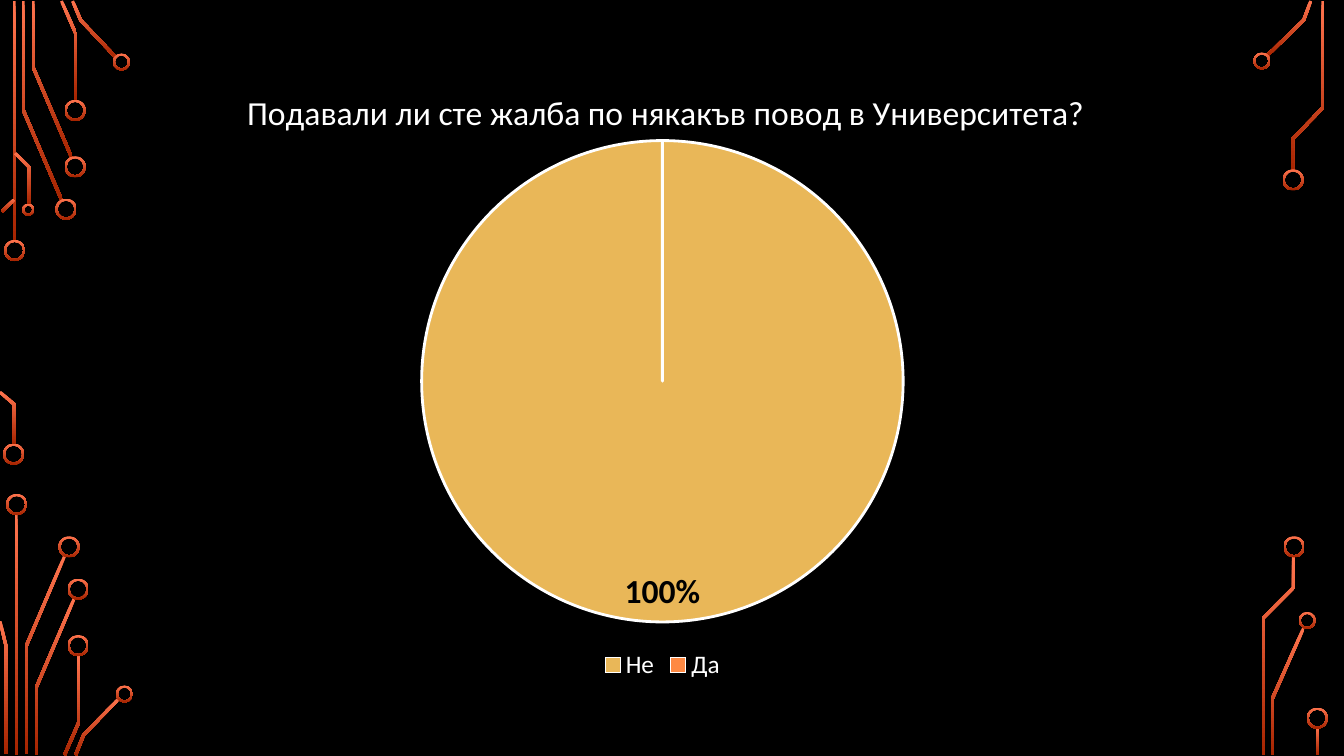
from math import hypot

from lxml.etree import SubElement
from pptx import Presentation
from pptx.chart.data import CategoryChartData
from pptx.dml.color import RGBColor
from pptx.enum.chart import XL_CHART_TYPE, XL_LABEL_POSITION, XL_LEGEND_POSITION
from pptx.enum.shapes import MSO_SHAPE
from pptx.oxml.ns import qn
from pptx.util import Inches, Pt

COLORS = {"back": "000000", "light": "FF744E", "dark": "A62400",
          "white": "FFFFFF", "black": "000000", "no": "E9B758", "yes": "FE8943"}
FONT = "Calibri"
WIDTH = 0.03  # width of a circuit trace
RIM = 0.02    # thickness of a ring

# Centre lines of the circuit traces
TRACES = [
    # top left
    [(0.14, 0.01), (0.14, 2.4)],
    [(0.61, 1.98), (0.23, 1.09), (0.23, 0.01)],
    [(0.71, 1.56), (0.33, 0.67), (0.33, 0.01)],
    [(0.75, 1), (0.75, 0.33), (0.61, 0.01)],
    [(1.15, 0.57), (0.8, 0.2), (0.72, 0.01)],
    [(0.02, 2.1), (0.14, 1.98)],
    [(0.29, 2.03), (0.29, 1.66), (0.15, 1.52)],
    # bottom left
    [(0.14, 4.41), (0.14, 4.01), (0, 3.89)],
    [(0.16, 5.1), (0.16, 7.49)],
    [(0.26, 7.48), (0.26, 6.41), (0.64, 5.52)],
    [(0.06, 7.48), (0.06, 6.41), (0, 6.16)],
    [(0.36, 7.49), (0.36, 6.82), (0.74, 5.93)],
    [(0.64, 7.49), (0.78, 7.17), (0.78, 6.5)],
    [(0.75, 7.49), (0.83, 7.29), (1.18, 6.93)],
    # top right
    [(12.57, 0.55), (12.93, 0.2), (13, 0.01)],
    [(12.82, 1.69), (12.82, 1.38), (13.12, 1.07), (13.12, 0.01)],
    # bottom right
    [(12.62, 7.49), (12.62, 6.93), (12.93, 6.23)],
    [(12.53, 7.49), (12.53, 6.13), (12.83, 5.83), (12.83, 5.52)],
    [(13.07, 7.21), (13.07, 7.49)],
]

# Left and top of the rings, by diameter
RINGS = {
    0.21: [(0.04, 2.38), (0.03, 4.4), (0.55, 1.97), (0.64, 1.55), (0.64, 0.99),
           (0.06, 4.9), (0.58, 5.32), (0.67, 5.74), (0.67, 6.3),
           (12.72, 1.68), (12.73, 5.32), (12.96, 7.02)],
    0.17: [(1.12, 0.53), (1.15, 6.8), (12.43, 0.52), (12.88, 6.07)],
    0.12: [(0.22, 2.02)],
}


def color(name):
    return RGBColor.from_string(COLORS[name])


def style(font, **format):
    font.color.rgb = color(format.pop("color"))
    for key, value in {"name": FONT, **format}.items():
        setattr(font, key, value)


def glow(shape):
    """Fill a shape from light at the top to dark at the bottom."""
    shape.shadow.inherit = False
    shape.line.fill.background()
    shape.fill.gradient()
    shape.fill.gradient_angle = 270
    for stop, name in zip(shape.fill.gradient_stops, ("light", "dark")):
        stop.color.rgb = color(name)


def edge(points):
    """Points half a width to one side of a line, with mitred corners."""
    norms = []
    for (x1, y1), (x2, y2) in zip(points, points[1:]):
        size = hypot(x2 - x1, y2 - y1)
        norms.append(((y1 - y2) / size, (x2 - x1) / size))
    sides = zip(points, norms[:1] + norms, norms + norms[-1:])
    result = []
    for (x, y), (ax, ay), (bx, by) in sides:
        reach = WIDTH / 2 / (1 + ax * bx + ay * by)
        result.append((x + (ax + bx) * reach, y + (ay + by) * reach))
    return result


def add_trace(slide, points):
    band = edge(points) + edge(points[::-1])
    band = [(Inches(x), Inches(y)) for x, y in band]
    form = slide.shapes.build_freeform(*band[0])
    form.add_line_segments(band[1:], close=True)
    glow(form.convert_to_shape())


def add_ring(slide, left, top, size):
    ring = slide.shapes.add_shape(MSO_SHAPE.DONUT, Inches(left), Inches(top),
                                  Inches(size), Inches(size))
    ring.adjustments[0] = RIM / size
    glow(ring)


def place(parent, **parts):
    """Fix the place of a chart part, in fractions of the chart."""
    layout = parent.find(qn("c:layout"))
    if layout is None:
        layout = parent.makeelement(qn("c:layout"))
        text = parent.find(qn("c:tx"))
        if text is None:
            parent.insert(0, layout)
        else:
            text.addnext(layout)
    manual = SubElement(layout, qn("c:manualLayout"))
    for key, value in parts.items():
        SubElement(manual, qn("c:" + key)).set("val", str(value))


def add_pie(slide):
    data = CategoryChartData()
    data.categories = ["Не", "Да"]
    data.add_series("Series 1", (100, 0))
    chart = slide.shapes.add_chart(XL_CHART_TYPE.PIE, Inches(0.6), Inches(0.58),
                                   Inches(11.94), Inches(6.22), data).chart
    style(chart.font, size=Pt(10), color="white")

    # Title
    frame = chart.chart_title.text_frame
    frame.text = "Подавали ли сте жалба по някакъв повод в Университета?"
    style(frame.paragraphs[0].runs[0].font, size=Pt(24), bold=False, color="white")
    chart.chart_title.include_in_layout = False
    title = frame._txBody.getparent().getparent()
    place(title, xMode="edge", yMode="edge", x=0.15, y=0.04)

    # Legend
    chart.has_legend = True
    chart.legend.position = XL_LEGEND_POSITION.BOTTOM
    chart.legend.include_in_layout = False
    style(chart.legend.font, size=Pt(18), color="white")

    # Slices
    plot = chart.plots[0]
    plot.vary_by_categories = True
    for index, name in enumerate(("no", "yes")):
        point = plot.series[0].points[index].format
        point.fill.solid()
        point.fill.fore_color.rgb = color(name)
        point.line.color.rgb = color("white")
        point.line.width = Pt(2)
    place(plot._element.getparent(), layoutTarget="inner", xMode="edge",
          yMode="edge", x=0.3, y=0.13, w=0.4, h=0.77)

    # Labels: the number format leaves out zero
    labels = plot.series[0].data_labels
    format = {"show_percentage": True, "show_value": False,
              "number_format": "0%;;", "number_format_is_linked": False,
              "position": XL_LABEL_POSITION.BEST_FIT}
    for key, value in format.items():
        setattr(labels, key, value)
    style(labels.font, size=Pt(24), bold=True, color="black")


def main():
    deck = Presentation()
    deck.slide_width, deck.slide_height = Inches(13.33), Inches(7.5)
    slide = deck.slides.add_slide(deck.slide_layouts[6])
    slide.background.fill.solid()
    slide.background.fill.fore_color.rgb = color("back")

    # Circuit pattern
    for points in TRACES:
        add_trace(slide, points)
    for size, spots in RINGS.items():
        for left, top in spots:
            add_ring(slide, left, top, size)

    add_pie(slide)
    deck.save("out.pptx")


if __name__ == "__main__":
    main()
